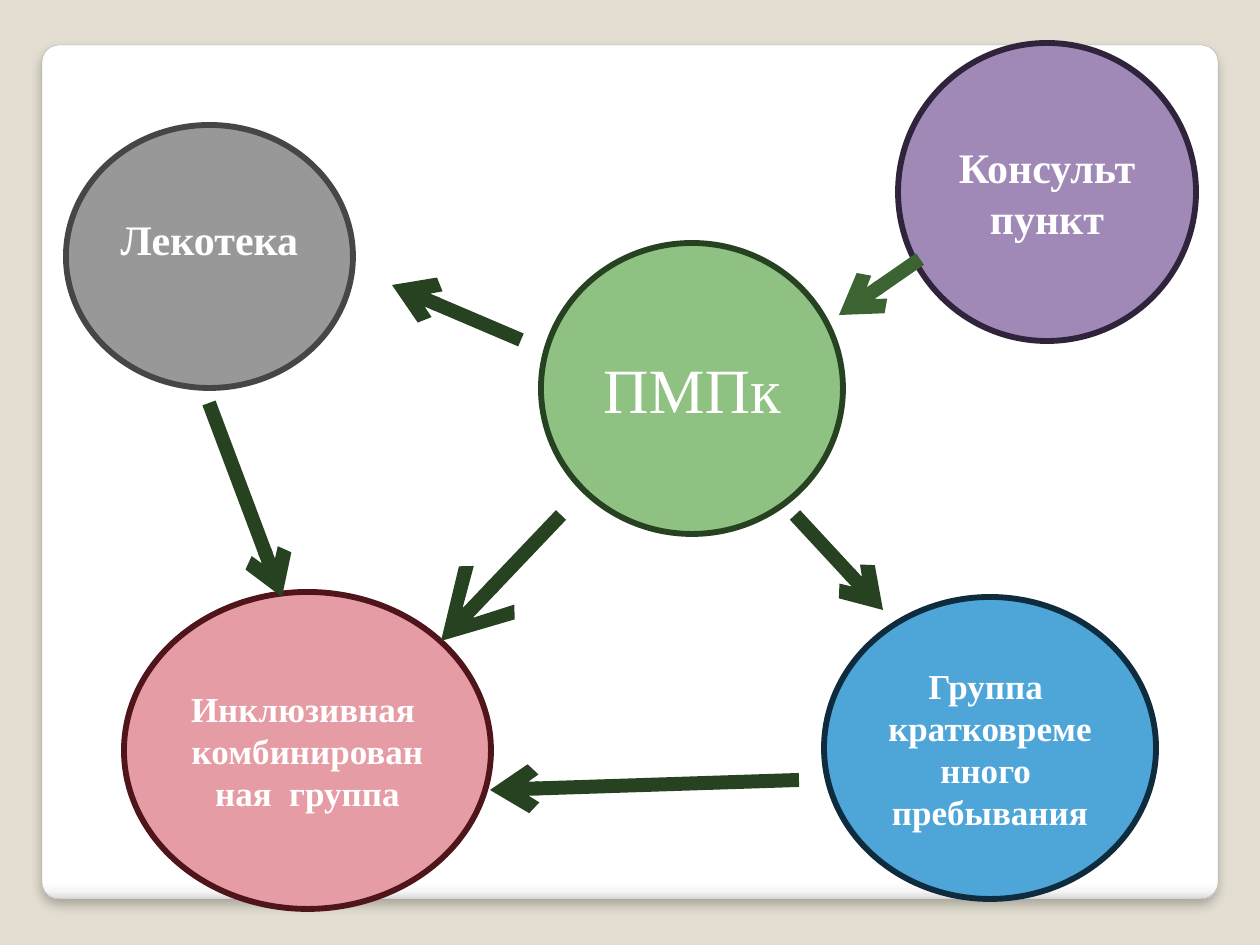
"""Build a slide of five linked circles around a central council."""
from lxml import etree
from pptx import Presentation
from pptx import util as u
from pptx.dml.color import RGBColor
from pptx.enum import shapes, text
from pptx.oxml import parse_xml
from pptx.oxml.ns import nsdecls, qn

SCALE = 914400 / 126
FONT = "Times New Roman"
DARK_GREEN = "274221"


def px(length):
    """Turn pixels into EMU."""
    return u.Emu(round(length * SCALE))


def color(value):
    """Turn a hex string into a colour."""
    return RGBColor.from_string(value)


def set_line(shape, value, width):
    """Set the outline colour and its width in points."""
    shape.line.color.rgb = color(value)
    shape.line.width = u.Pt(width)


def add_card(page):
    """Add the rounded white panel with its edge gradient and soft shadow."""
    card = page.shapes.add_shape(
        shapes.MSO_SHAPE.ROUNDED_RECTANGLE, px(42), px(45), px(1176), px(854))
    card.adjustments[0] = 0.02
    set_line(card, "A4A4A4", 0.16)
    stops = [(0, "FFFFFF"), (98, "FFFFFF"), (99, "F7F7F7"), (100, "DADADA")]
    marks = "".join(
        f'<a:gs pos="{place * 1000}"><a:srgbClr val="{value}"/></a:gs>'
        for place, value in stops)
    gradient = parse_xml(
        f'<a:gradFill {nsdecls("a")}><a:gsLst>{marks}</a:gsLst>'
        '<a:lin ang="5400000" scaled="0"/></a:gradFill>')
    properties = card._element.spPr
    properties.find(qn("a:prstGeom")).addnext(gradient)
    properties.append(parse_xml(
        f'<a:effectLst {nsdecls("a")}>'
        f'<a:outerShdw blurRad="{u.Pt(6)}" dist="{u.Pt(4)}" dir="5400000">'
        '<a:srgbClr val="000000"><a:alpha val="25000"/></a:srgbClr>'
        '</a:outerShdw></a:effectLst>'))


def add_circle(page, frame, fill, outline, lines, size, bold=True, lift=0):
    """Add a labelled ellipse, its label raised by a deeper bottom inset."""
    circle = page.shapes.add_shape(shapes.MSO_SHAPE.OVAL, *map(px, frame))
    circle.shadow.inherit = False
    circle.fill.solid()
    circle.fill.fore_color.rgb = color(fill)
    set_line(circle, outline, 3.35)
    box = circle.text_frame
    box.word_wrap = True
    box.vertical_anchor = text.MSO_ANCHOR.MIDDLE
    box.margin_bottom = px(6 + lift)
    for index, line in enumerate(lines):
        para = box.add_paragraph() if index else box.paragraphs[0]
        para.alignment = text.PP_ALIGN.CENTER
        span = para.add_run()
        span.text = line
        span.font.name = FONT
        span.font.size = u.Pt(size)
        span.font.bold = bold
        span.font.color.rgb = color("FFFFFF")


def add_arrow(page, start, end, value=DARK_GREEN, head="med"):
    """Add a thick line with an open arrowhead at its end."""
    arrow = page.shapes.add_connector(
        shapes.MSO_CONNECTOR.STRAIGHT, *map(px, start + end))
    set_line(arrow, value, 8)
    etree.SubElement(arrow.line._get_or_add_ln(), qn("a:tailEnd"),
                     type="arrow", w=head, len=head)
    etree.SubElement(arrow._element.spPr, qn("a:effectLst"))


def main():
    """Build and save the deck."""
    deck = Presentation()
    deck.slide_width, deck.slide_height = px(1260), px(945)
    page = deck.slides.add_slide(deck.slide_layouts[6])
    page.background.fill.solid()
    page.background.fill.fore_color.rgb = color("E3DED1")
    add_card(page)
    add_circle(page, (66, 125, 287, 263), "989898", "464646",
               ["Лекотека"], 24, lift=36)
    add_circle(page, (124, 592, 367, 317), "E69CA4", "50141B",
               ["Инклюзивная  комбинированная  группа"], 20)
    add_circle(page, (824, 597, 332, 302), "4EA5D8", "0E2C3E",
               ["Группа  кратковременного  пребывания"], 20)
    add_circle(page, (898, 43, 298, 298), "A088B7", "30243C",
               ["Консульт", "пункт"], 24)
    add_arrow(page, (561, 515), (441, 641), head="lg")
    add_arrow(page, (799, 780), (490, 790))
    add_arrow(page, (209, 403), (282, 597))
    add_circle(page, (541, 243, 302, 291), "8EC182", DARK_GREEN,
               ["ПМПк"], 36, bold=False)
    add_arrow(page, (521, 340), (392, 285))
    add_arrow(page, (795, 515), (883, 610))
    add_arrow(page, (920, 259), (839, 315), "3B6432")
    deck.save("out.pptx")


if __name__ == "__main__":
    main()
